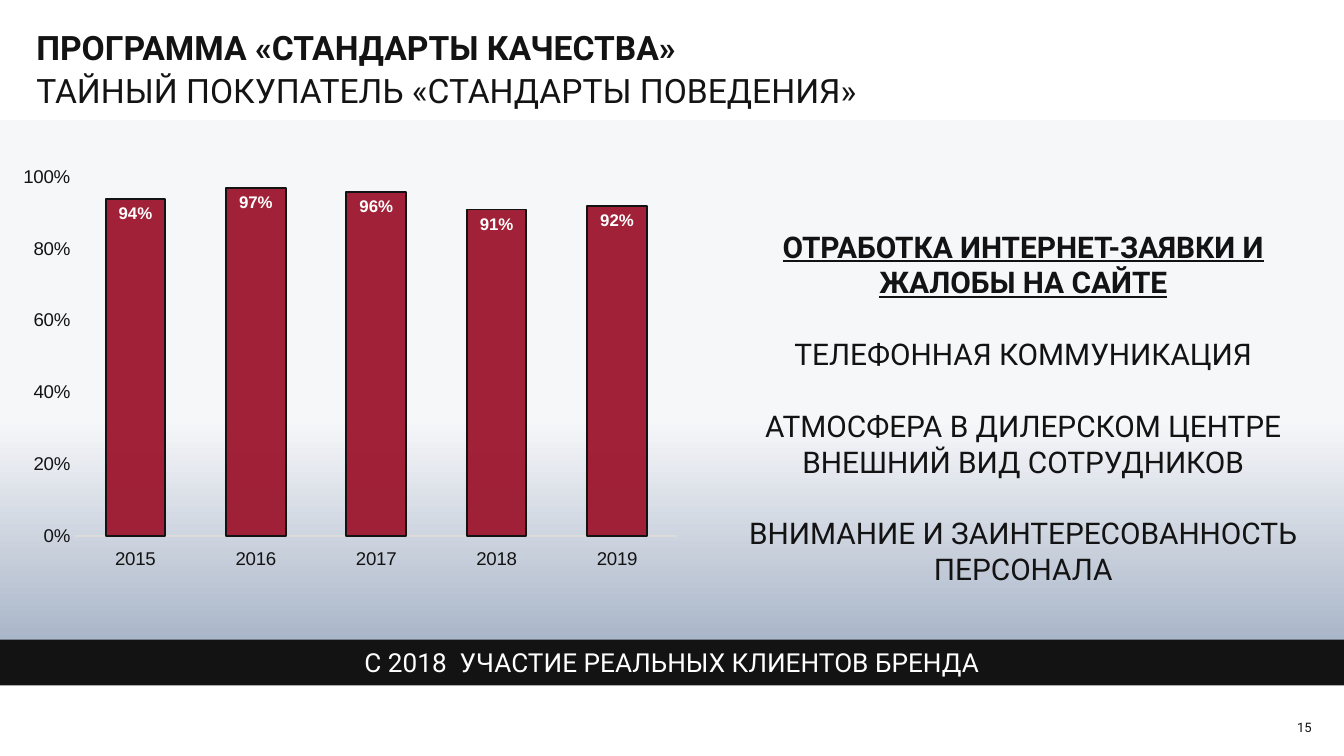
import pptx
import pptx.chart.data
import pptx.dml.color
import pptx.enum.chart
import pptx.enum.shapes
import pptx.enum.text
import pptx.oxml
import pptx.oxml.ns
import pptx.util
from pptx.util import Inches

COLORS = {
    "ink": "131313",
    "white": "FFFFFF",
    "bar": "9E1B32",
    "axis": "DCDCDC",
    "sky": "F6F7F9",
    "haze": "AAB6C9",
}
ALIGN = pptx.enum.text.PP_ALIGN
ANCHOR = pptx.enum.text.MSO_ANCHOR
SLIDE_WIDTH = 10
CHART_WIDTH, CHART_HEIGHT = 5.06, 3.07
SCORES = {"2015": 0.94, "2016": 0.97, "2017": 0.96, "2018": 0.91, "2019": 0.92}
# Each topic group is separated from the next by one line of space.
TOPIC_GROUPS = [
    ["ОТРАБОТКА ИНТЕРНЕТ-ЗАЯВКИ И ЖАЛОБЫ НА САЙТЕ"],
    ["ТЕЛЕФОННАЯ КОММУНИКАЦИЯ"],
    ["АТМОСФЕРА В ДИЛЕРСКОМ ЦЕНТРЕ", "ВНЕШНИЙ ВИД СОТРУДНИКОВ"],
    ["ВНИМАНИЕ И ЗАИНТЕРЕСОВАННОСТЬ ПЕРСОНАЛА"],
]


def rgb(name):
    return pptx.dml.color.RGBColor.from_string(COLORS[name])


def style_font(font, size, color="ink", bold=False, family="Roboto"):
    font.name = family
    font.size = pptx.util.Pt(size)
    font.bold = bold
    font.color.rgb = rgb(color)


def set_frame(frame, inset=0.0, anchor=ANCHOR.MIDDLE, wrap=True):
    frame.word_wrap = wrap
    frame.vertical_anchor = anchor
    frame.margin_left = frame.margin_right = Inches(inset)
    frame.margin_top = frame.margin_bottom = Inches(inset)


def write(paragraph, text, size, color="ink", bold=False, align=ALIGN.LEFT):
    paragraph.alignment = align
    run = paragraph.add_run()
    run.text = text
    style_font(run.font, size, color, bold)
    return run


def add_label(slide, box, text, size, bold=False, align=ALIGN.LEFT, **frame_options):
    frame = slide.shapes.add_textbox(*map(Inches, box)).text_frame
    set_frame(frame, **frame_options)
    write(frame.paragraphs[0], text, size, bold=bold, align=align)


def add_band(slide, top, height):
    """Add a full-width rectangle without outline or shadow."""
    band = slide.shapes.add_shape(
        pptx.enum.shapes.MSO_SHAPE.RECTANGLE,
        Inches(0), Inches(top), Inches(SLIDE_WIDTH), Inches(height))
    band.shadow.inherit = False
    band.line.fill.background()
    return band


def add_backdrop(slide):
    fill = add_band(slide, 0.89, 4.21).fill
    fill.gradient()
    fill.gradient_angle = 270
    for stop, position, color in zip(fill.gradient_stops, (0.53, 0.92), ("sky", "haze")):
        stop.position = position
        stop.color.rgb = rgb(color)


def add_footer(slide, text):
    band = add_band(slide, 4.76, 0.34)
    band.fill.solid()
    band.fill.fore_color.rgb = rgb("ink")
    set_frame(band.text_frame, inset=0.05)
    write(band.text_frame.paragraphs[0], text, 14, "white", align=ALIGN.CENTER)


def add_topics(slide):
    frame = slide.shapes.add_textbox(
        Inches(5.38), Inches(1.65), Inches(4.47), Inches(3)).text_frame
    set_frame(frame, inset=0.05, anchor=ANCHOR.TOP)
    for group_index, group in enumerate(TOPIC_GROUPS):
        for line_index, topic in enumerate(group):
            is_first = group_index == line_index == 0
            paragraph = frame.paragraphs[0] if is_first else frame.add_paragraph()
            if group_index and not line_index:
                paragraph.space_before = pptx.util.Pt(19.2)
            run = write(paragraph, topic, 16, bold=is_first, align=ALIGN.CENTER)
            run.font.underline = is_first


def place_plot(chart, left, top, width, height):
    """Fix the inner plot area, in inches from the corner of the chart."""
    plot_area = chart.plots[0]._element.getparent()
    for layout in plot_area.findall(pptx.oxml.ns.qn("c:layout")):
        plot_area.remove(layout)
    places = "".join(f'<c:{tag} val="{value}"/>' for tag, value in (
        ("layoutTarget", "inner"), ("xMode", "edge"), ("yMode", "edge"),
        ("x", left / CHART_WIDTH), ("y", top / CHART_HEIGHT),
        ("w", width / CHART_WIDTH), ("h", height / CHART_HEIGHT)))
    plot_area.insert(0, pptx.oxml.parse_xml(
        f'<c:layout {pptx.oxml.ns.nsdecls("c")}>'
        f"<c:manualLayout>{places}</c:manualLayout></c:layout>"))


def style_axes(chart):
    for axis in (chart.category_axis, chart.value_axis):
        axis.major_tick_mark = axis.minor_tick_mark = pptx.enum.chart.XL_TICK_MARK.NONE
        axis.has_major_gridlines = False
        style_font(axis.tick_labels.font, 10, family="Arial")
    years, percent = chart.category_axis, chart.value_axis
    years.tick_label_position = pptx.enum.chart.XL_TICK_LABEL_POSITION.LOW
    years.format.line.color.rgb = rgb("axis")
    years.format.line.width = pptx.util.Pt(1)
    percent.format.line.fill.background()
    percent.minimum_scale, percent.maximum_scale, percent.major_unit = 0, 1, 0.2
    percent.tick_labels.number_format = "0%"
    percent.tick_labels.number_format_is_linked = False


def style_bars(plot):
    plot.gap_width, plot.overlap = 102, -27
    plot.vary_by_categories = False
    series = plot.series[0]
    series.format.fill.solid()
    series.format.fill.fore_color.rgb = rgb("bar")
    bar_color = next(series._element.iter(pptx.oxml.ns.qn("a:srgbClr")))
    bar_color.append(pptx.oxml.parse_xml(
        f'<a:alpha {pptx.oxml.ns.nsdecls("a")} val="97000"/>'))
    series.format.line.color.rgb = rgb("ink")
    series.format.line.width = pptx.util.Pt(1)
    labels = series.data_labels
    labels.show_value = True
    labels.position = pptx.enum.chart.XL_LABEL_POSITION.INSIDE_END
    labels.number_format = "0%"
    labels.number_format_is_linked = False
    style_font(labels.font, 9, "white", bold=True, family="Arial")


def add_score_chart(slide):
    data = pptx.chart.data.CategoryChartData(number_format="0%")
    data.categories = list(SCORES)
    data.add_series("Series 1", list(SCORES.values()))
    chart = slide.shapes.add_chart(
        pptx.enum.chart.XL_CHART_TYPE.COLUMN_CLUSTERED,
        Inches(0), Inches(1.17), Inches(CHART_WIDTH), Inches(CHART_HEIGHT), data).chart
    chart.has_title = chart.has_legend = False
    style_font(chart.font, 10)
    style_axes(chart)
    style_bars(chart.plots[0])
    place_plot(chart, 0.56, 0.15, 4.48, 2.68)


def main():
    deck = pptx.Presentation()
    deck.slide_width = Inches(SLIDE_WIDTH)
    deck.slide_height = Inches(SLIDE_WIDTH * 9 / 16)
    slide = deck.slides.add_slide(deck.slide_layouts[6])
    add_backdrop(slide)
    add_label(slide, (0.27, 0.18, 7.25, 0.34), "ПРОГРАММА «СТАНДАРТЫ КАЧЕСТВА»", 18, bold=True)
    add_label(slide, (0.27, 0.51, 7.25, 0.32), "ТАЙНЫЙ ПОКУПАТЕЛЬ «СТАНДАРТЫ ПОВЕДЕНИЯ»", 18)
    add_label(slide, (9.62, 5.33, 0.14, 0.14), "15", 7, align=ALIGN.RIGHT,
              anchor=ANCHOR.BOTTOM, wrap=False)
    add_topics(slide)
    add_footer(slide, "С 2018  УЧАСТИЕ РЕАЛЬНЫХ КЛИЕНТОВ БРЕНДА")
    add_score_chart(slide)
    deck.save("out.pptx")


if __name__ == "__main__":
    main()
